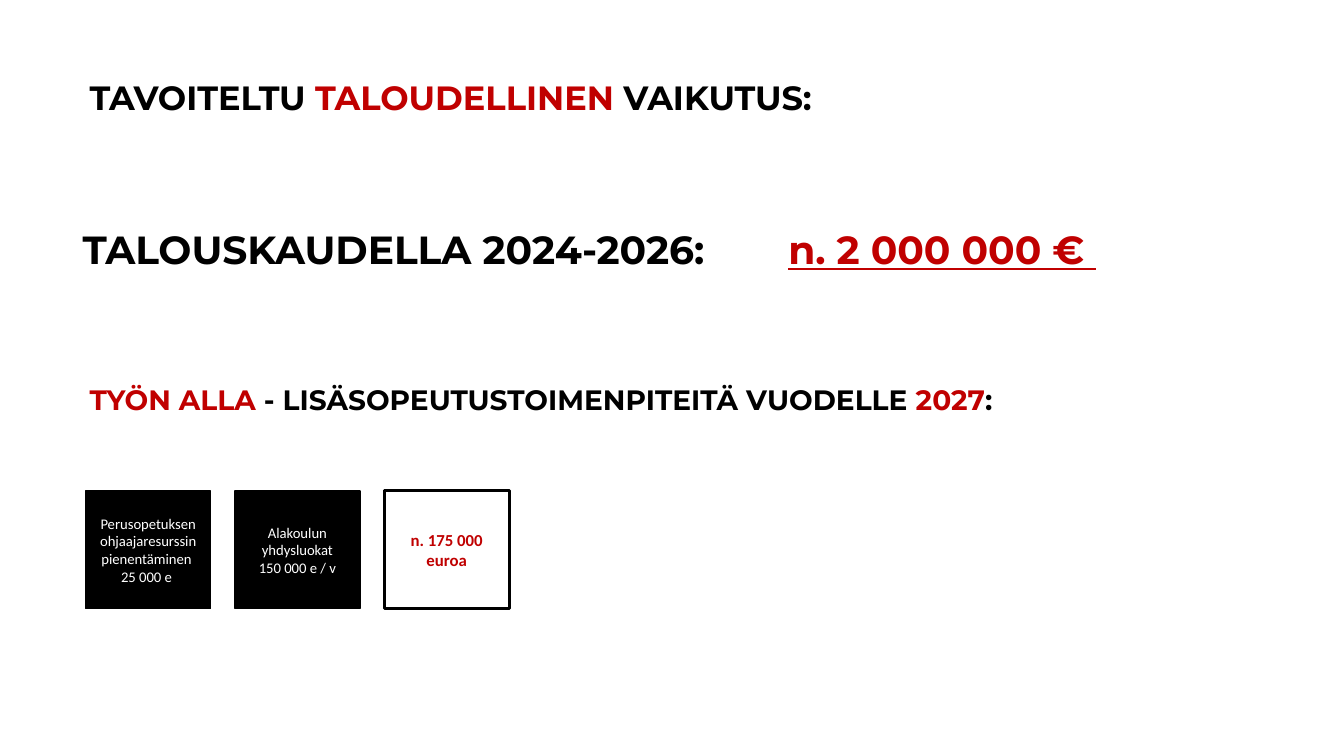
"""Build the slide on the targeted economic effect."""
from pptx import Presentation
from pptx.dml.color import RGBColor
from pptx.enum.shapes import MSO_SHAPE
from pptx.enum.text import MSO_ANCHOR, PP_ALIGN
from pptx.util import Inches, Pt

BLACK, WHITE, RED = "000000", "FFFFFF", "C00000"


def color(code):
    return RGBColor.from_string(code)


class Page:
    head = "Montserrat"
    body = "Calibri"

    def __init__(self, slide):
        self.slide = slide

    def run(self, para, text, font, size, code, bold=False, line=False):
        run = para.add_run()
        run.text = text
        run.font.name = font
        run.font.size = Pt(size)
        run.font.bold = bold
        run.font.underline = line
        run.font.color.rgb = color(code)

    def title(self, place, size, parts):
        box = self.slide.shapes.add_textbox(*map(Inches, place))
        box.text_frame.word_wrap = True
        para = box.text_frame.paragraphs[0]
        for text, code, line in parts:
            self.run(para, text, self.head, size, code, True, line)

    def card(self, place, lines, size, fill, ink, edge, bold):
        box = self.slide.shapes.add_shape(MSO_SHAPE.RECTANGLE, *map(Inches, place))
        box.shadow.inherit = False
        box.fill.solid()
        box.fill.fore_color.rgb = color(fill)
        box.line.color.rgb = color(BLACK)
        box.line.width = Pt(edge)
        frame = box.text_frame
        frame.word_wrap = True
        frame.vertical_anchor = MSO_ANCHOR.MIDDLE
        for i, text in enumerate(lines):
            para = frame.add_paragraph() if i else frame.paragraphs[0]
            para.alignment = PP_ALIGN.CENTER
            self.run(para, text, self.body, size, ink, bold)


def main():
    deck = Presentation()
    deck.slide_width, deck.slide_height = Inches(13.33), Inches(7.5)
    page = Page(deck.slides.add_slide(deck.slide_layouts[6]))

    page.title((0.79, 0.71, 10.53, 0.5), 24, [
        ("TAVOITELTU ", BLACK, False),
        ("TALOUDELLINEN ", RED, False),
        ("VAIKUTUS:", BLACK, False),
    ])
    page.title((0.72, 2.19, 12.32, 0.88), 28, [
        ("TALOUSKAUDELLA 2024-2026: \t\t", BLACK, False),
        ("n. 2 000 000 € ", RED, True),
    ])
    page.title((0.79, 3.75, 12.16, 0.44), 20, [
        ("TYÖN ALLA ", RED, False),
        ("- LISÄSOPEUTUSTOIMENPITEITÄ VUODELLE ", BLACK, False),
        ("2027", RED, False),
        (":", BLACK, False),
    ])

    dark = (10.5, BLACK, WHITE, 1, False)
    light = (12, WHITE, RED, 2.25, True)
    cards = [
        (["Perusopetuksen ohjaajaresurssin pienentäminen ", "25 000 e "], dark),
        (["Alakoulun yhdysluokat", "150 000 e / v"], dark),
        (["n. 175 000 euroa"], light),
    ]
    for i, (lines, style) in enumerate(cards):
        page.card((0.85 + 1.48 * i, 4.87, 1.24, 1.17), lines, *style)

    deck.save("out.pptx")


if __name__ == "__main__":
    main()
